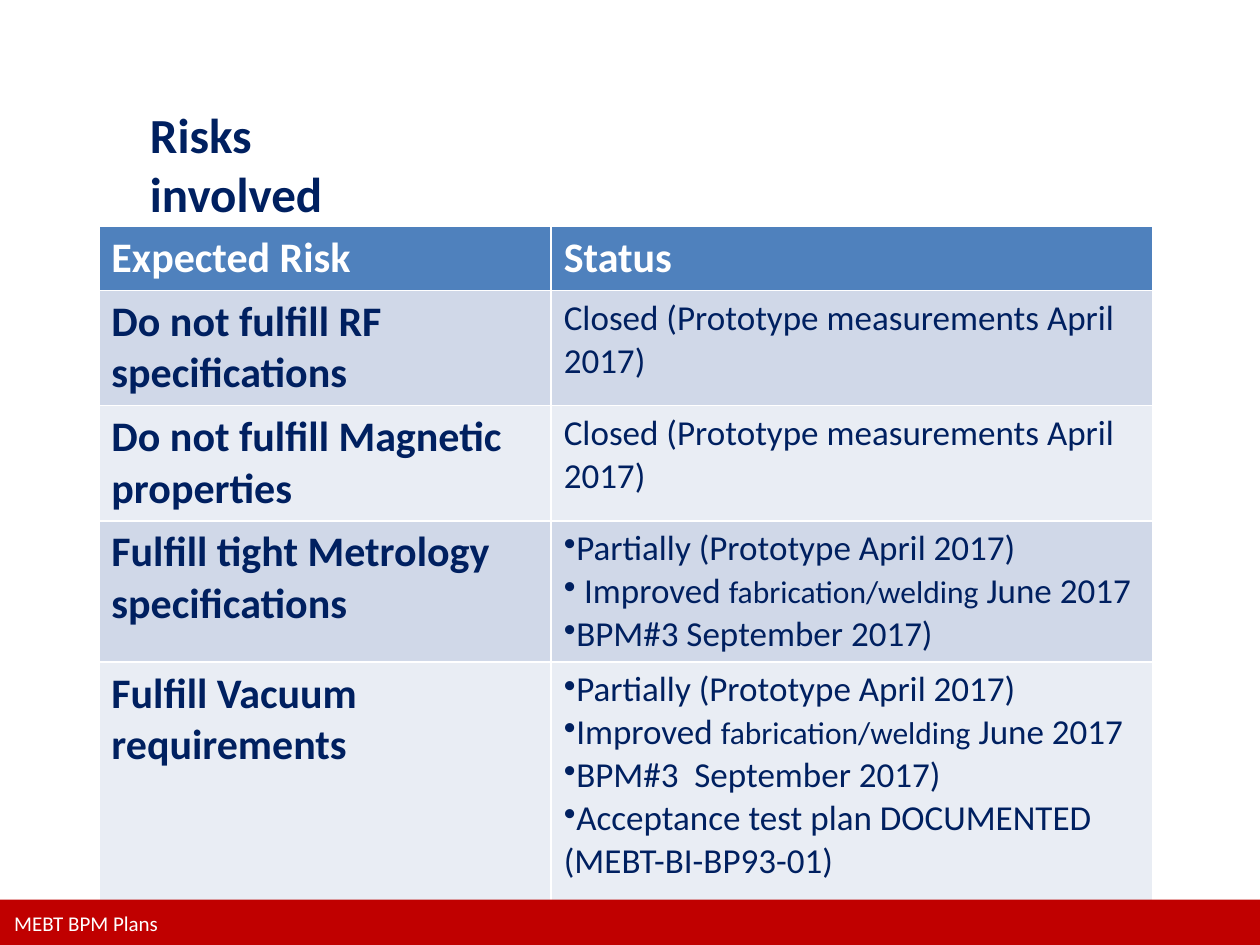
from lxml import etree
from pptx import Presentation
from pptx.dml.color import RGBColor
from pptx.enum.shapes import MSO_SHAPE
from pptx.enum.text import MSO_ANCHOR, MSO_AUTO_SIZE, PP_ALIGN
from pptx.oxml.ns import qn
from pptx.util import Pt

TOP, LEFT = MSO_ANCHOR.TOP, PP_ALIGN.LEFT
NO_AUTOFIT = MSO_AUTO_SIZE.NONE
RECTANGLE = MSO_SHAPE.RECTANGLE

NAVY = RGBColor(0x00, 0x20, 0x60)
WHITE = RGBColor(0xFF, 0xFF, 0xFF)
RED = RGBColor(0xC0, 0x00, 0x00)
HEADER_BLUE = RGBColor(0x4F, 0x81, 0xBD)
BANDS = [RGBColor(0xD0, 0xD8, 0xE8), RGBColor(0xE9, 0xED, 0xF4)]

COLUMN_WIDTHS = [258.5, 343.5]
ROW_HEIGHTS = [34, 61, 61, 75, 142.5]

# A status is a list of paragraphs; a paragraph is a list of (text, size) runs.
CLOSED = [[("Closed (Prototype measurements April 2017)", 20)]]
PARTIALLY = [("Partially (Prototype April 2017)", 20)]
WELDING = [("fabrication/welding", 18), (" June 2017", 20)]
RISKS = [
    ("Do not fulfill RF specifications", CLOSED),
    ("Do not fulfill Magnetic properties", CLOSED),
    ("Fulfill tight Metrology specifications", [
        PARTIALLY,
        [(" Improved ", 20)] + WELDING,
        [("BPM#3 September 2017)", 20)],
    ]),
    ("Fulfill Vacuum requirements", [
        PARTIALLY,
        [("Improved ", 20)] + WELDING,
        [("BPM#3  September 2017)", 20)],
        [("Acceptance test plan DOCUMENTED (MEBT-BI-BP93-01)", 20)],
    ]),
]


def add_run(paragraph, text, size, color, bold=False):
    run = paragraph.add_run()
    run.text = text
    run.font.name = "Calibri"
    run.font.size = Pt(size)
    run.font.bold = bold
    run.font.color.rgb = color


def fill_cell(cell, paragraphs, fill, color, bold=False):
    """Write paragraphs of runs in a cell; several paragraphs become bullets."""
    cell.fill.solid()
    cell.fill.fore_color.rgb = fill
    for index, runs in enumerate(paragraphs):
        frame = cell.text_frame
        paragraph = frame.add_paragraph() if index else frame.paragraphs[0]
        for text, size in runs:
            add_run(paragraph, text, size, color, bold)
        if len(paragraphs) > 1:
            properties = paragraph._p.get_or_add_pPr()
            etree.SubElement(properties, qn("a:buChar")).set("char", "•")


presentation = Presentation()
presentation.slide_width = Pt(720)
presentation.slide_height = Pt(540)
slide = presentation.slides.add_slide(presentation.slide_layouts[5])

# Title
title = slide.shapes.title
title.left, title.top, title.width, title.height = Pt(78.5), Pt(56), Pt(168), Pt(41)
title_frame = title.text_frame
title_frame.word_wrap = True
title_frame.auto_size = NO_AUTOFIT
title_frame.vertical_anchor = TOP
title_paragraph = title_frame.paragraphs[0]
title_paragraph.alignment = LEFT
add_run(title_paragraph, "Risks involved", 28, NAVY, bold=True)

# Risk table
table = slide.shapes.add_table(
    len(ROW_HEIGHTS), len(COLUMN_WIDTHS), Pt(56.5), Pt(129.5),
    Pt(sum(COLUMN_WIDTHS)), Pt(sum(ROW_HEIGHTS))).table
for column, width in zip(table.columns, COLUMN_WIDTHS):
    column.width = Pt(width)
for row, height in zip(table.rows, ROW_HEIGHTS):
    row.height = Pt(height)
for column, heading in enumerate(["Expected Risk", "Status"]):
    fill_cell(table.cell(0, column), [[(heading, 24)]], HEADER_BLUE, WHITE, bold=True)
for index, (risk, status) in enumerate(RISKS):
    band = BANDS[index % 2]
    fill_cell(table.cell(index + 1, 0), [[(risk, 24)]], band, NAVY, bold=True)
    fill_cell(table.cell(index + 1, 1), status, band, NAVY)

# Footer
bar = slide.shapes.add_shape(RECTANGLE, Pt(0), Pt(514), Pt(720), Pt(26))
bar.shadow.inherit = False
bar.fill.solid()
bar.fill.fore_color.rgb = RED
bar.line.fill.background()

footer = slide.shapes.add_textbox(Pt(1), Pt(516.5), Pt(98), Pt(21.5))
footer.text_frame.word_wrap = False
add_run(footer.text_frame.paragraphs[0], "MEBT BPM Plans", 12, WHITE)

presentation.save("out.pptx")
